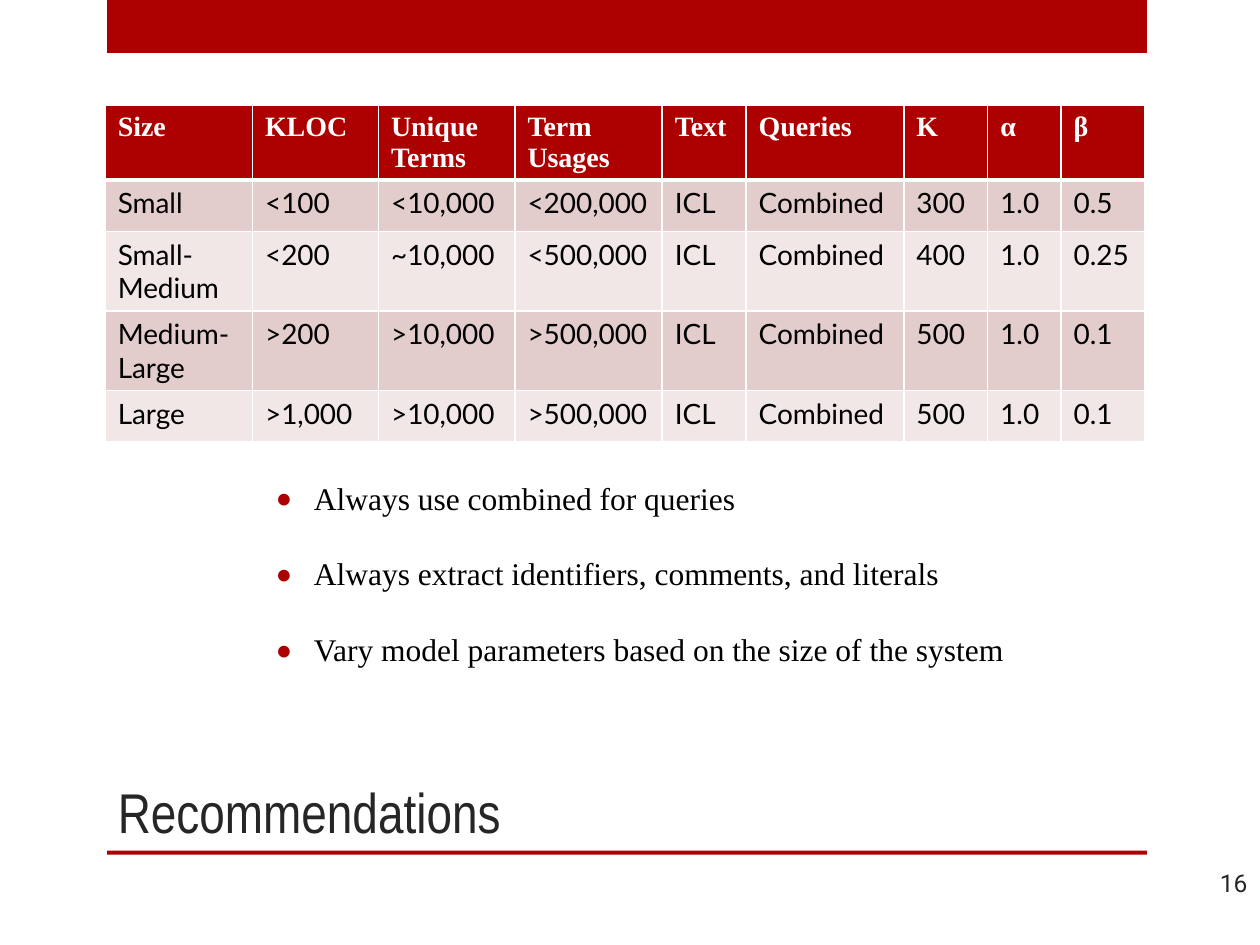
from lxml.etree import SubElement
from pptx import Presentation
from pptx.dml.color import RGBColor
from pptx.enum.shapes import MSO_SHAPE as Shape
from pptx.enum.text import MSO_ANCHOR as Anchor, PP_ALIGN as Align
from pptx.oxml.ns import qn
from pptx.util import Cm, Pt

RED = RGBColor(0xAD, 0x01, 0x01)
WHITE = RGBColor(0xFF, 0xFF, 0xFF)
BLACK = RGBColor(0, 0, 0)
CHARCOAL = RGBColor(0x26, 0x26, 0x26)
BANDS = (RGBColor(0xE3, 0xCC, 0xCC), RGBColor(0xF1, 0xE7, 0xE7))

TITLE = {"name": "Arial Narrow", "size": Pt(32), "bold": False}
HEADER = {"name": "Times New Roman", "size": Pt(16), "bold": True}
BODY = {"name": "Lato", "size": Pt(16), "bold": False}
BULLET = {"name": "Times New Roman", "size": Pt(18)}
NUMBER = {"name": "Roboto", "size": Pt(14)}

COLUMN_WIDTHS = (2.97, 2.54, 2.75, 2.97, 1.69, 3.18, 1.69, 1.48, 1.69)
ROW_HEIGHTS = (1.48, 1.04, 1.6, 1.6, 1.04)
ROWS = (
    ("Size", "KLOC", "Unique Terms", "Term Usages", "Text", "Queries", "K", "α", "β"),
    ("Small", "<100", "<10,000", "<200,000", "ICL", "Combined", "300", "1.0", "0.5"),
    ("Small-Medium", "<200", "~10,000", "<500,000", "ICL", "Combined", "400", "1.0", "0.25"),
    ("Medium-Large", ">200", ">10,000", ">500,000", "ICL", "Combined", "500", "1.0", "0.1"),
    ("Large", ">1,000", ">10,000", ">500,000", "ICL", "Combined", "500", "1.0", "0.1"),
)
ADVICE = (
    "Always use combined for queries",
    "Always extract identifiers, comments, and literals",
    "Vary model parameters based on the size of the system",
)


class SlideBuilder:
    """Draws styled elements on one slide."""

    def __init__(self, presentation):
        self.slide = presentation.slides.add_slide(presentation.slide_layouts[5])

    def style(self, paragraph, values, color):
        for name, value in values.items():
            setattr(paragraph.font, name, value)
        paragraph.font.color.rgb = color

    def bar(self, *box):
        shape = self.slide.shapes.add_shape(Shape.RECTANGLE, *map(Cm, box))
        shape.shadow.inherit = False
        shape.fill.solid()
        shape.fill.fore_color.rgb = RED
        shape.line.fill.background()

    def title(self, text, left, top, width, height):
        shape = self.slide.shapes.title
        box = {"left": left, "top": top, "width": width, "height": height}
        for name, value in box.items():
            setattr(shape, name, Cm(value))
        shape.text_frame.text = text
        shape.text_frame.vertical_anchor = Anchor.BOTTOM
        paragraph = shape.text_frame.paragraphs[0]
        paragraph.alignment = Align.LEFT
        self.style(paragraph, TITLE, CHARCOAL)

    def text_frame(self, box):
        frame = self.slide.shapes.add_textbox(*map(Cm, box)).text_frame
        frame.word_wrap = True
        return frame

    def number(self, text, *box):
        frame = self.text_frame(box)
        frame.text = text
        frame.vertical_anchor = Anchor.MIDDLE
        paragraph = frame.paragraphs[0]
        paragraph.alignment = Align.RIGHT
        self.style(paragraph, NUMBER, CHARCOAL)

    def bullets(self, items, *box):
        frame = self.text_frame(box)
        for index, item in enumerate(items):
            paragraph = frame.add_paragraph() if index else frame.paragraphs[0]
            paragraph.text = item
            if index:
                paragraph.space_before = Pt(21.6)
            properties = paragraph._p.get_or_add_pPr()
            properties.set("marL", str(Cm(0.79)))
            properties.set("indent", str(-Cm(0.79)))
            color = SubElement(properties, qn("a:buClr"))
            SubElement(color, qn("a:srgbClr"), val=str(RED))
            SubElement(properties, qn("a:buFont"), typeface="Lato")
            SubElement(properties, qn("a:buChar"), char="•")
            self.style(paragraph, BULLET, BLACK)

    def borders(self, cell, top, bottom):
        properties = cell._tc.get_or_add_tcPr()
        for side, width in (("L", 1), ("R", 1), ("T", top), ("B", bottom)):
            line = SubElement(properties, qn(f"a:ln{side}"), w=str(Pt(width)))
            fill = SubElement(line, qn("a:solidFill"))
            SubElement(fill, qn("a:srgbClr"), val=str(WHITE))

    def table(self, rows, left, top):
        box = (left, top, sum(COLUMN_WIDTHS), sum(ROW_HEIGHTS))
        shape = self.slide.shapes.add_table(len(rows), len(rows[0]), *map(Cm, box))
        table = shape.table
        for column, width in zip(table.columns, COLUMN_WIDTHS):
            column.width = Cm(width)
        for row, height in zip(table.rows, ROW_HEIGHTS):
            row.height = Cm(height)
        for row_index, texts in enumerate(rows):
            header = row_index == 0
            for column_index, text in enumerate(texts):
                cell = table.cell(row_index, column_index)
                cell.text = text
                self.borders(cell, 3 if row_index == 1 else 1, 3 if header else 1)
                cell.fill.solid()
                cell.fill.fore_color.rgb = RED if header else BANDS[(row_index - 1) % 2]
                self.style(
                    cell.text_frame.paragraphs[0],
                    HEADER if header else BODY,
                    WHITE if header else BLACK,
                )


def main():
    presentation = Presentation()
    presentation.slide_width, presentation.slide_height = Cm(25.4), Cm(19.05)
    builder = SlideBuilder(presentation)
    builder.bar(2.16, 0, 20.96, 1.07)
    builder.bar(2.16, 17.15, 20.96, 0.08)
    builder.title("Recommendations", 2.12, 12.7, 18.85, 4.45)
    builder.table(ROWS, 2.12, 2.12)
    builder.number("16", 23.7, 17.22, 1.7, 1.14)
    builder.bullets(ADVICE, 5.29, 9.53, 15.37, 4.11)
    presentation.save("out.pptx")


if __name__ == "__main__":
    main()
